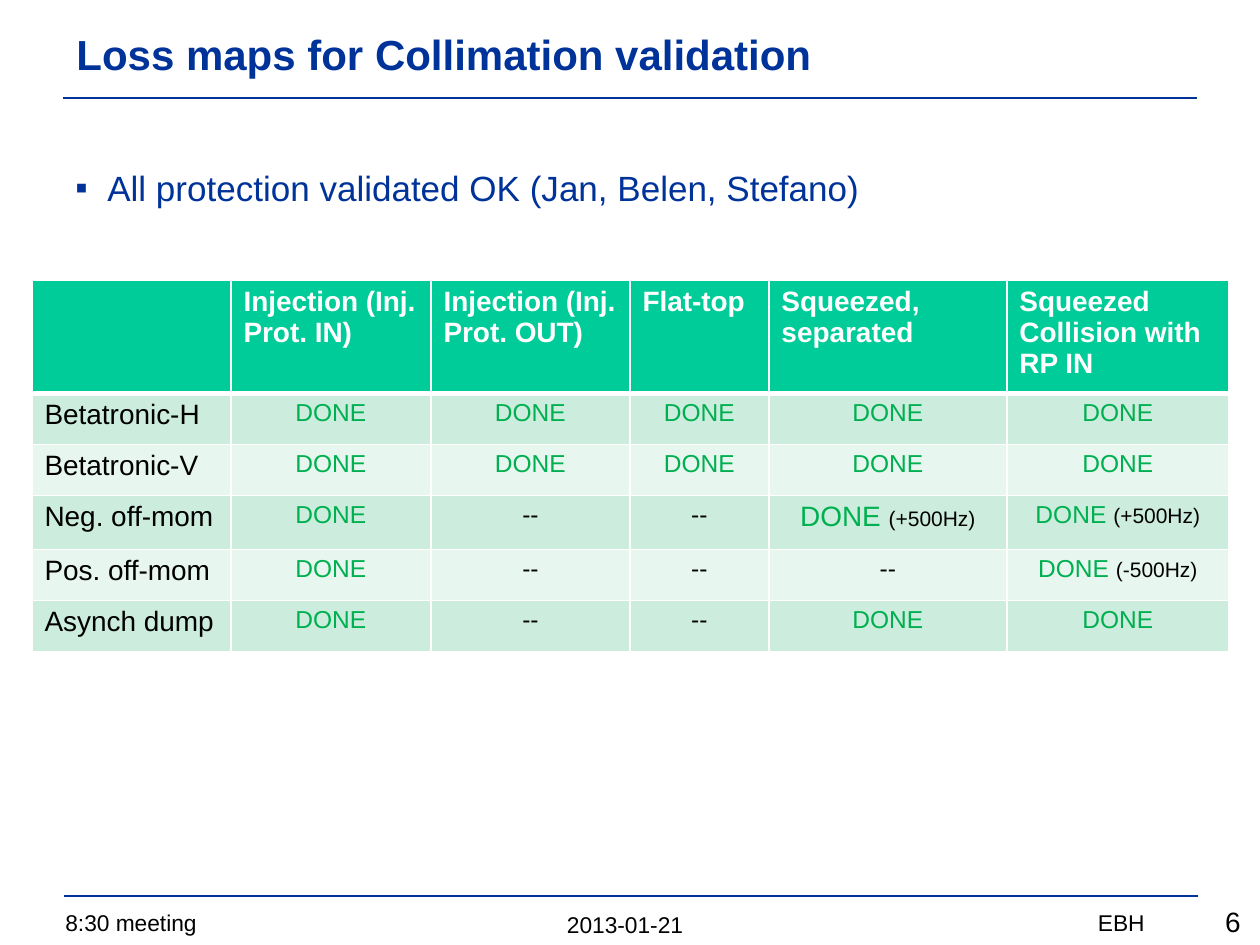
from lxml import etree
from pptx import Presentation
from pptx.dml.color import RGBColor
from pptx.enum import shapes, text
from pptx.oxml.ns import qn
from pptx.util import Pt

PX = 914400 // 126
FONT = "Arial"
COLORS = {
    "navy": "003399",
    "black": "000000",
    "white": "FFFFFF",
    "done": "00B050",
    "header": "00CC99",
    "band_dark": "CCECDE",
    "band_light": "E7F6EF",
}
LEFT, CENTER, RIGHT = text.PP_ALIGN.LEFT, text.PP_ALIGN.CENTER, text.PP_ALIGN.RIGHT

COLUMN_WIDTHS = [199, 200, 199, 139, 238, 222]
ROW_HEIGHTS = [105, 51, 51, 54, 51, 51]
HEADERS = ["", "Injection (Inj. Prot. IN)", "Injection (Inj. Prot. OUT)", "Flat-top",
           "Squeezed, separated", "Squeezed Collision with RP IN"]
DONE = [("DONE", 14, "done")]
NONE = [("--", 14, "black")]


def done_at(frequency, size=14):
    return [("DONE ", size, "done"), (frequency, 12, "black")]


RESULTS = {
    "Betatronic-H": [DONE] * 5,
    "Betatronic-V": [DONE] * 5,
    "Neg. off-mom": [DONE, NONE, NONE, done_at("(+500Hz)", 16), done_at("(+500Hz)")],
    "Pos. off-mom": [DONE, NONE, NONE, NONE, done_at("(-500Hz)")],
    "Asynch dump": [DONE, NONE, NONE, DONE, DONE],
}


def px(value):
    return value * PX


def rgb(name):
    return RGBColor.from_string(COLORS[name])


def write_runs(paragraph, runs, align=LEFT, bold=False):
    paragraph.alignment = align
    for content, size, color in runs:
        run = paragraph.add_run()
        run.text = content
        run.font.name = FONT
        run.font.size = Pt(size)
        run.font.bold = bold
        run.font.color.rgb = rgb(color)


def add_text(slide, box, run, align=LEFT, bold=False, anchor=text.MSO_ANCHOR.TOP):
    frame = slide.shapes.add_textbox(*map(px, box)).text_frame
    frame.word_wrap = True
    frame.vertical_anchor = anchor
    write_runs(frame.paragraphs[0], [run], align, bold)
    return frame


def add_bullet(paragraph, character, indent):
    properties = paragraph._p.get_or_add_pPr()
    properties.set("marL", str(indent))
    properties.set("indent", str(-indent))
    etree.SubElement(properties, qn("a:buFont"), typeface=FONT)
    etree.SubElement(properties, qn("a:buChar"), char=character)


def add_rule(slide, left, right, y):
    line = slide.shapes.add_connector(
        shapes.MSO_CONNECTOR.STRAIGHT, px(left), px(y), px(right), px(y))
    line.line.color.rgb = rgb("navy")
    line.line.width = Pt(1.5)
    etree.SubElement(line._element.spPr, qn("a:effectLst"))


def set_borders(cell, top=1, bottom=1):
    properties = cell._tc.get_or_add_tcPr()
    for side, width in (("L", 1), ("R", 1), ("T", top), ("B", bottom)):
        border = etree.SubElement(properties, qn(f"a:ln{side}"), w=str(Pt(width)))
        fill = etree.SubElement(border, qn("a:solidFill"))
        etree.SubElement(fill, qn("a:srgbClr"), val=COLORS["white"])


def fill_cell(cell, runs, fill, align=LEFT, bold=False, top=1, bottom=1):
    set_borders(cell, top, bottom)
    cell.fill.solid()
    cell.fill.fore_color.rgb = rgb(fill)
    write_runs(cell.text_frame.paragraphs[0], runs, align, bold)


def add_results_table(slide, left, top):
    table = slide.shapes.add_table(
        len(ROW_HEIGHTS), len(COLUMN_WIDTHS), px(left), px(top),
        px(sum(COLUMN_WIDTHS)), px(sum(ROW_HEIGHTS))).table
    for column, width in zip(table.columns, COLUMN_WIDTHS):
        column.width = px(width)
    for row, height in zip(table.rows, ROW_HEIGHTS):
        row.height = px(height)

    # Header row
    for column, label in enumerate(HEADERS):
        runs = [(label, 16, "white")] if label else []
        fill_cell(table.cell(0, column), runs, "header", bold=True, bottom=3)

    # Banded result rows
    for row, (label, results) in enumerate(RESULTS.items(), start=1):
        fill = "band_dark" if row % 2 else "band_light"
        top_width = 3 if row == 1 else 1
        fill_cell(table.cell(row, 0), [(label, 16, "black")], fill, top=top_width)
        for column, runs in enumerate(results, start=1):
            fill_cell(table.cell(row, column), runs, fill, CENTER, top=top_width)


def main():
    presentation = Presentation()
    presentation.slide_width, presentation.slide_height = px(1260), px(945)
    slide = presentation.slides.add_slide(presentation.slide_layouts[6])

    # Footer
    add_text(slide, (305, 905, 640, 40), ("2013-01-21", 13, "black"), CENTER)
    add_text(slide, (53, 903, 466, 40), ("8:30 meeting", 13, "black"))
    add_text(slide, (789, 903, 368, 40), ("EBH", 13, "black"), RIGHT)
    add_rule(slide, 64, 1198, 896)
    add_text(slide, (1108, 898, 145, 46), ("6", 16, "black"), RIGHT)

    # Title
    add_rule(slide, 63, 1197, 98)
    add_text(slide, (64, 11, 1133, 86), ("Loss maps for Collimation validation", 24, "navy"),
             bold=True, anchor=text.MSO_ANCHOR.MIDDLE)

    # Body
    body = add_text(slide, (63, 108, 1134, 776),
                    ("All protection validated OK (Jan, Belen, Stefano)", 20, "navy"))
    body.margin_top = px(58)
    add_bullet(body.paragraphs[0], "▪", px(32))

    add_results_table(slide, 32, 280)
    presentation.save("out.pptx")


if __name__ == "__main__":
    main()
